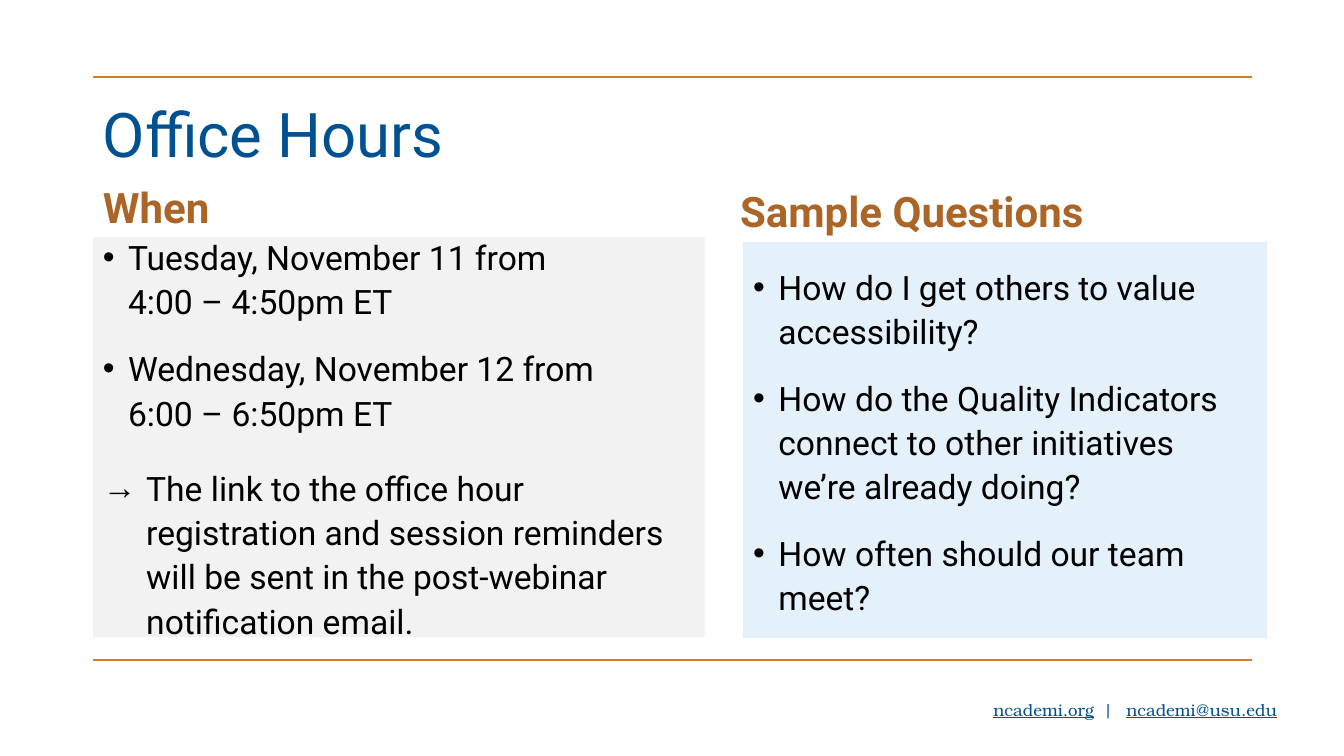
import dataclasses

import lxml.etree
import pptx
import pptx.dml.color
import pptx.enum.shapes
import pptx.enum.text
import pptx.oxml.ns
import pptx.shapes.base
import pptx.slide
import pptx.text.text
import pptx.util

Inches = pptx.util.Inches
Pt = pptx.util.Pt
RGBColor = pptx.dml.color.RGBColor
Align = pptx.enum.text.PP_ALIGN
Anchor = pptx.enum.text.MSO_ANCHOR

BLUE = RGBColor(0x00, 0x51, 0x91)
BROWN = RGBColor(0xAB, 0x65, 0x27)
ORANGE = RGBColor(0xD8, 0x7D, 0x26)
BLACK = RGBColor(0x00, 0x00, 0x00)
GRAY = RGBColor(0xF2, 0xF2, 0xF2)
PALE = RGBColor(0xE5, 0xF1, 0xFA)
SANS = "Roboto"
SERIF = "TeX Gyre Bonum"


@dataclasses.dataclass(frozen=True)
class Box:
    left: float
    top: float
    width: float
    height: float


@dataclasses.dataclass(frozen=True)
class Item:
    lines: tuple[str, ...]
    after: float = 6
    mark: str = "•"
    indent: float = 0.25


@dataclasses.dataclass(frozen=True)
class Panel:
    title: str
    head: Box
    body: Box
    fill: RGBColor
    items: tuple[Item, ...]


PANELS = (
    Panel("When", Box(0.92, 1.7, 6.35, 0.65), Box(0.92, 2.35, 6.07, 3.97), GRAY, (
        Item(("Tuesday, November 11 from", "4:00 – 4:50pm ET")),
        Item(("Wednesday, November 12 from", "6:00 – 6:50pm ET"), after=12),
        Item(("The link to the office hour registration and session reminders "
              "will be sent in the post-webinar notification email.",),
             after=48, mark="→", indent=0.43),
    )),
    Panel("Sample Questions", Box(7.24, 1.74, 5.92, 0.65), Box(7.37, 2.4, 5.2, 3.93), PALE, (
        Item(("How do I get others to value accessibility?",)),
        Item(("How do the Quality Indicators connect to other initiatives "
              "we’re already doing?",)),
        Item(("How often should our team meet?",)),
    )),
)


def place(shape: pptx.shapes.base.BaseShape, box: Box, anchor: Anchor) -> pptx.text.text.TextFrame:
    shape.left, shape.top = Inches(box.left), Inches(box.top)
    shape.width, shape.height = Inches(box.width), Inches(box.height)
    frame = shape.text_frame
    frame.word_wrap = True
    frame.auto_size = pptx.enum.text.MSO_AUTO_SIZE.NONE
    frame.vertical_anchor = anchor
    return frame


def write(para, text: str, size: float, color: RGBColor, face: str = SANS,
          bold: bool = False, under: bool = False):
    run = para.add_run()
    run.text = text
    font = run.font
    font.name, font.size, font.bold, font.underline = face, Pt(size), bold, under
    font.color.rgb = color
    return run


def space(para, line: float, before: float = 0, after: float = 0) -> None:
    para.alignment = Align.LEFT
    para.line_spacing = line
    para.space_before, para.space_after = Pt(before), Pt(after)


def bullet(para, item: Item) -> None:
    props = para._p.get_or_add_pPr()
    props.set("marL", str(Inches(item.indent)))
    props.set("indent", str(-Inches(item.indent)))
    for tag, key, value in (("a:buFont", "typeface", "Arial"), ("a:buChar", "char", item.mark)):
        lxml.etree.SubElement(props, pptx.oxml.ns.qn(tag)).set(key, value)


def rule(slide: pptx.slide.Slide, top: float) -> None:
    line = slide.shapes.add_connector(pptx.enum.shapes.MSO_CONNECTOR.STRAIGHT,
                                      Inches(0.92), Inches(top), Inches(12.42), Inches(top))
    line.line.color.rgb = ORANGE
    line.line.width = Pt(1.5)
    lxml.etree.SubElement(line._element.spPr, pptx.oxml.ns.qn("a:effectLst"))


def footer(slide: pptx.slide.Slide) -> None:
    shape = slide.shapes.add_textbox(0, 0, 0, 0)
    para = place(shape, Box(8.24, 6.89, 6.04, 0.3), Anchor.TOP).paragraphs[0]
    para.alignment = Align.CENTER
    write(para, "ncademi.org", 12, BLUE, SERIF, under=True)
    bar = write(para, " | ", 12, BLUE, SERIF)
    bar._r.get_or_add_rPr().set("spc", "270")
    write(para, "ncademi@usu.edu", 12, BLUE, SERIF, under=True)


def panel(slide: pptx.slide.Slide, part: Panel, index: int) -> None:
    head = place(slide.placeholders[index], part.head, Anchor.BOTTOM).paragraphs[0]
    space(head, 1.1, after=6)
    write(head, part.title, 30, BROWN, bold=True)
    shape = slide.placeholders[index + 1]
    frame = place(shape, part.body, Anchor.MIDDLE)
    shape.fill.solid()
    shape.fill.fore_color.rgb = part.fill
    for order, item in enumerate(part.items):
        para = frame.add_paragraph() if order else frame.paragraphs[0]
        bullet(para, item)
        space(para, 1.1, 10 if order else 0, item.after)
        for row, text in enumerate(item.lines):
            if row:
                para.add_line_break()
            write(para, text, 24, BLACK)


def main() -> None:
    deck = pptx.Presentation()
    deck.slide_width, deck.slide_height = Inches(13.33), Inches(7.5)
    slide = deck.slides.add_slide(deck.slide_layouts.get_by_name("Comparison"))
    for top in (0.76, 6.55):
        rule(slide, top)
    footer(slide)
    title = place(slide.shapes.title, Box(0.92, 0.91, 11.5, 0.9), Anchor.MIDDLE).paragraphs[0]
    space(title, 0.9)
    write(title, "Office Hours", 44, BLUE)
    for order, part in enumerate(PANELS):
        panel(slide, part, 2 * order + 1)
    deck.save("out.pptx")


if __name__ == "__main__":
    main()
